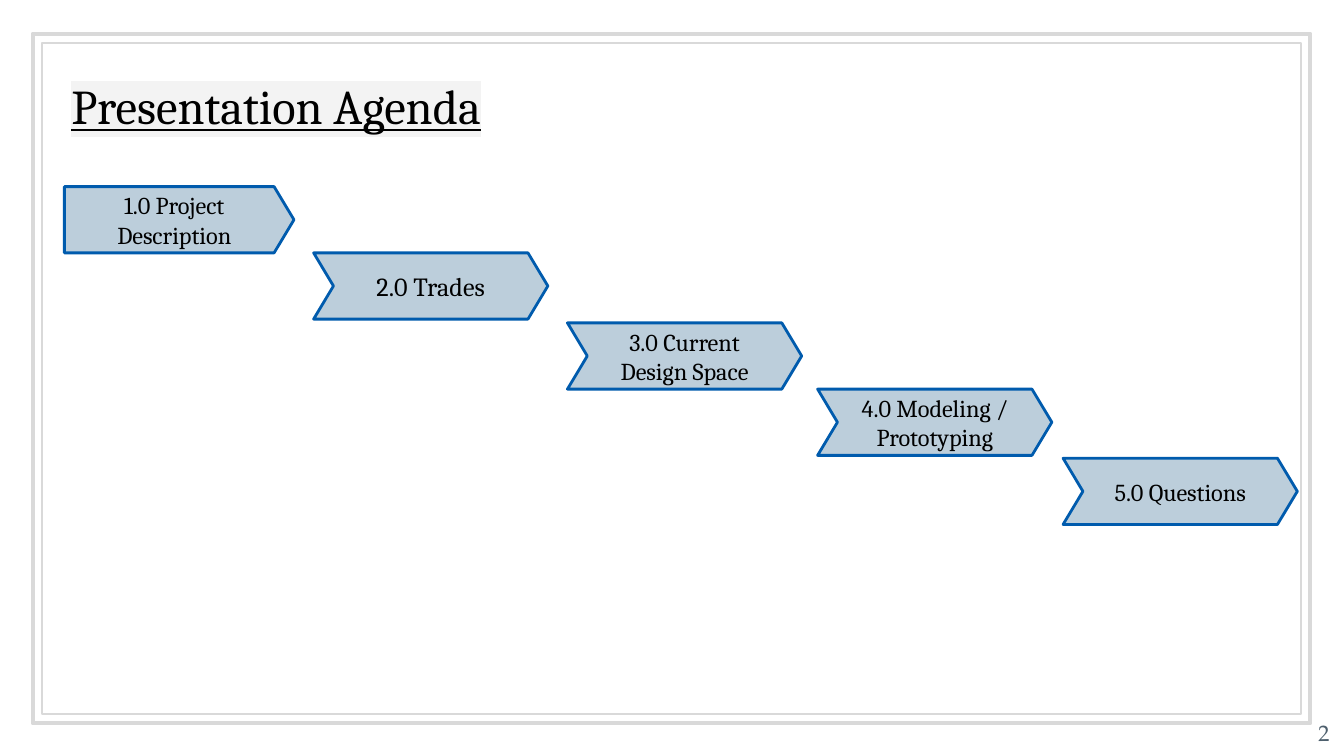
from lxml import etree
from pptx import Presentation
from pptx.dml.color import RGBColor
from pptx.enum import shapes, text
from pptx.oxml import ns
from pptx.util import Pt

# Content: label, left, top, width, type size
TITLE = "Presentation Agenda"
PAGE_NUMBER = "2"
STEPS = [
    ("1.0 Project Description", 34.5, 100, 123, 13),
    ("2.0 Trades", 168, 135.5, 125.5, 14),
    ("3.0 Current Design Space", 304, 173, 125.5, 13),
    ("4.0 Modeling / Prototyping", 438, 208.5, 125.5, 13),
    ("5.0 Questions", 569.5, 245.5, 125.5, 13),
]
FRAMES = [  # left, top, width, height, line width
    (17.5, 18, 684.5, 369.5, 2.25),
    (22.5, 23, 674.5, 359.5, 0.75),
]
STEP_HEIGHT = 35.5
STEP_POINT = 0.3

THEME = {
    "frame": "D9D9D9", "fill": "BCCEDB", "line": "005BAD",
    "ink": "000000", "number": "4D5F6D", "highlight": "F3F3F3",
    "font": "Cambria", "number_font": "TeX Gyre Pagella",
    "title_size": 26, "number_size": 12, "step_line": 1.5, "inset": 7.2,
}


def color(name):
    return RGBColor.from_string(THEME[name])


def write(box, words, *, size, font="font", ink="ink",
          align=text.PP_ALIGN.CENTER, anchor=text.MSO_ANCHOR.MIDDLE,
          underline=None, highlight=None):
    frame = box.text_frame
    frame.word_wrap = True
    frame.auto_size = text.MSO_AUTO_SIZE.NONE
    frame.vertical_anchor = anchor
    frame.margin_left = frame.margin_right = Pt(THEME["inset"])
    frame.margin_top = frame.margin_bottom = Pt(THEME["inset"])
    para = frame.paragraphs[0]
    para.alignment = align
    span = para.add_run()
    span.text = words
    span.font.size = Pt(size)
    span.font.color.rgb = color(ink)
    span.font.underline = underline
    span.font.name = THEME[font]
    if highlight:
        mark = etree.Element(ns.qn("a:highlight"))
        etree.SubElement(mark, ns.qn("a:srgbClr"), val=THEME[highlight])
        span.font._element.find(ns.qn("a:latin")).addprevious(mark)


def add_box(page, kind, place, line, line_width, fill=None):
    box = page.shapes.add_shape(kind, *map(Pt, place))
    box.shadow.inherit = False
    box.line.color.rgb = color(line)
    box.line.width = Pt(line_width)
    if fill:
        box.fill.solid()
        box.fill.fore_color.rgb = color(fill)
    else:
        box.fill.background()
    return box


deck = Presentation()
deck.slide_width, deck.slide_height = Pt(720), Pt(405)
page = deck.slides.add_slide(deck.slide_layouts[5])

# Double frame
for *place, width in FRAMES:
    add_box(page, shapes.MSO_SHAPE.RECTANGLE, place, "frame", width)

# Title
title = page.shapes.title
title.left, title.top, title.width, title.height = map(Pt, (31, 26.5, 329, 60))
write(title, TITLE, size=THEME["title_size"], align=text.PP_ALIGN.LEFT,
      underline=True, highlight="highlight")

# Page number
number = page.shapes.add_textbox(*map(Pt, (698.5, 387.5, 21.5, 19.5)))
write(number, PAGE_NUMBER, size=THEME["number_size"], font="number_font",
      ink="number", anchor=text.MSO_ANCHOR.BOTTOM)

# Agenda steps: a pentagon opens, chevrons follow
for index, (label, left, top, width, size) in enumerate(STEPS):
    kind = shapes.MSO_SHAPE.CHEVRON if index else shapes.MSO_SHAPE.PENTAGON
    step = add_box(page, kind, (left, top, width, STEP_HEIGHT),
                   "line", THEME["step_line"], fill="fill")
    step.adjustments[0] = STEP_POINT
    write(step, label, size=size)

deck.save("out.pptx")
